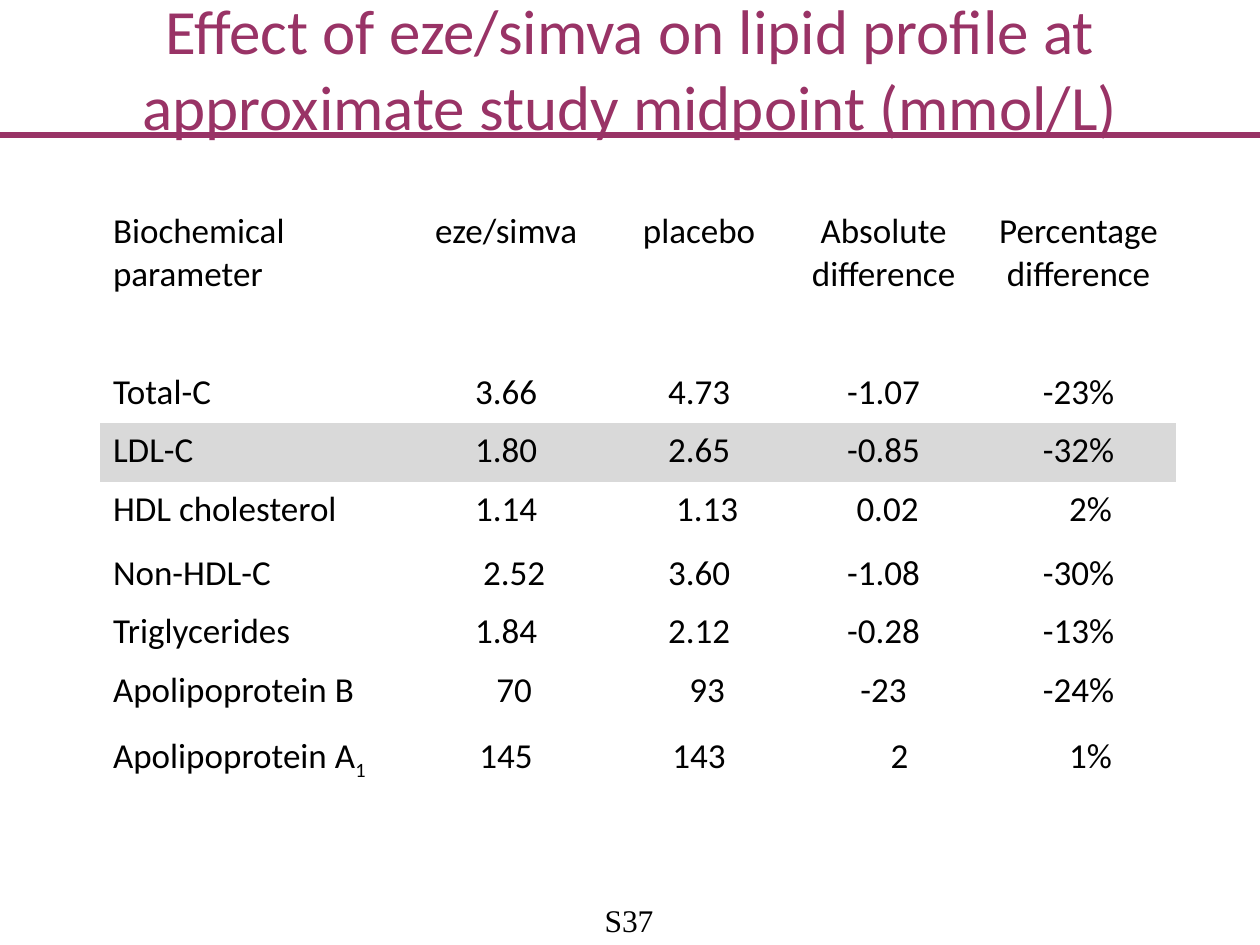
from lxml.etree import SubElement
from pptx import Presentation
from pptx.dml.color import RGBColor
from pptx.enum.shapes import MSO_CONNECTOR
from pptx.enum.text import MSO_ANCHOR, MSO_AUTO_SIZE, PP_ALIGN
from pptx.oxml.ns import qn
from pptx.util import Emu, Pt

PX = 914400 // 126
COLORS = {"plum": "993366", "black": "000000", "grey": "D9D9D9"}
NO_STYLE = "{2D5ABB26-0587-4C30-8999-92F81FD0307C}"

TITLE = "Effect of eze/simva on lipid profile at approximate study midpoint (mmol/L)"
PAGE_LABEL = "S37"
TITLE_FONT = {"name": "Calibri", "size": Pt(36), "bold": False}
TABLE_FONT = {"name": "Calibri", "size": Pt(20), "bold": False}
LABEL_FONT = {"name": "Times New Roman", "size": Pt(18)}

COLUMN_WIDTHS = [300, 212, 174, 195, 195]
# Row height, then the text of each cell
ROWS = [
    (102, ["Biochemical parameter", "eze/simva", "placebo",
           "Absolute difference", "Percentage difference"]),
    (59, ["", "", "", "", ""]),
    (58, ["Total-C", "3.66", "4.73", "-1.07", "-23%"]),
    (59, ["LDL-C", "1.80", "2.65", "-0.85", "-32%"]),
    (64, ["HDL cholesterol", "1.14", "1.13", "0.02", "2%"]),
    (58, ["Non-HDL-C", "2.52", "3.60", "-1.08", "-30%"]),
    (59, ["Triglycerides", "1.84", "2.12", "-0.28", "-13%"]),
    (66, ["Apolipoprotein B", "70", "93", "-23", "-24%"]),
    (79, ["Apolipoprotein A", "145", "143", "2", "1%"]),
]
HIGHLIGHT_ROW = 3
SUBSCRIPTS = {(8, 0): "1"}
MARGIN = 13
# Extra left margin that moves a centred value to the right
INDENTS = {(4, 2): 16, (4, 3): 8, (4, 4): 24, (5, 1): 16,
           (7, 1): 16, (7, 2): 16, (8, 3): 32, (8, 4): 24}


def px(length):
    return Emu(length * PX)


def place(shape, left, top, width, height):
    shape.left, shape.top = px(left), px(top)
    shape.width, shape.height = px(width), px(height)


def add_span(para, text, font, color):
    span = para.add_run()
    span.text = text
    for name, value in font.items():
        setattr(span.font, name, value)
    span.font.color.rgb = RGBColor.from_string(COLORS[color])
    return span


def add_title(page):
    title = page.shapes.title
    place(title, 0, 0, 1260, 135)
    frame = title.text_frame
    frame.word_wrap = True
    frame.auto_size = MSO_AUTO_SIZE.NONE
    frame.vertical_anchor = MSO_ANCHOR.MIDDLE
    para = frame.paragraphs[0]
    para.alignment = PP_ALIGN.CENTER
    add_span(para, TITLE, TITLE_FONT, "plum")


def add_rule(page):
    rule = page.shapes.add_connector(
        MSO_CONNECTOR.STRAIGHT, px(0), px(135), px(1260), px(135))
    rule.line.color.rgb = RGBColor.from_string(COLORS["plum"])
    rule.line.width = Pt(3)
    SubElement(rule.element.spPr, qn("a:effectLst"))


def add_page_label(page):
    box = page.shapes.add_textbox(px(602), px(901), px(54), px(38))
    frame = box.text_frame
    frame.word_wrap = False
    for side in ("left", "top", "right", "bottom"):
        setattr(frame, f"margin_{side}", 0)
    para = frame.paragraphs[0]
    para.alignment = PP_ALIGN.CENTER
    add_span(para, PAGE_LABEL, LABEL_FONT, "black")


def add_lipid_table(page):
    heights = [height for height, _ in ROWS]
    holder = page.shapes.add_table(
        len(ROWS), len(COLUMN_WIDTHS), px(100), px(204),
        px(sum(COLUMN_WIDTHS)), px(sum(heights)))
    table = holder.table
    table.first_row = table.horz_banding = False
    holder.element.find(".//" + qn("a:tableStyleId")).text = NO_STYLE
    for column, width in zip(table.columns, COLUMN_WIDTHS):
        column.width = px(width)
    for row_index, (height, texts) in enumerate(ROWS):
        table.rows[row_index].height = px(height)
        for column_index, text in enumerate(texts):
            spot = (row_index, column_index)
            cell = table.cell(*spot)
            cell.margin_left = px(MARGIN + INDENTS.get(spot, 0))
            if row_index == HIGHLIGHT_ROW:
                cell.fill.solid()
                cell.fill.fore_color.rgb = RGBColor.from_string(COLORS["grey"])
            else:
                cell.fill.background()
            if not text:
                continue
            para = cell.text_frame.paragraphs[0]
            para.alignment = PP_ALIGN.CENTER if column_index else PP_ALIGN.LEFT
            add_span(para, text, TABLE_FONT, "black")
            if spot in SUBSCRIPTS:
                span = add_span(para, SUBSCRIPTS[spot], TABLE_FONT, "black")
                span.font._element.set("baseline", "-25000")


def main():
    deck = Presentation()
    deck.slide_width, deck.slide_height = px(1260), px(945)
    page = deck.slides.add_slide(deck.slide_layouts[5])
    add_rule(page)
    add_page_label(page)
    add_title(page)
    add_lipid_table(page)
    deck.save("out.pptx")


if __name__ == "__main__":
    main()
